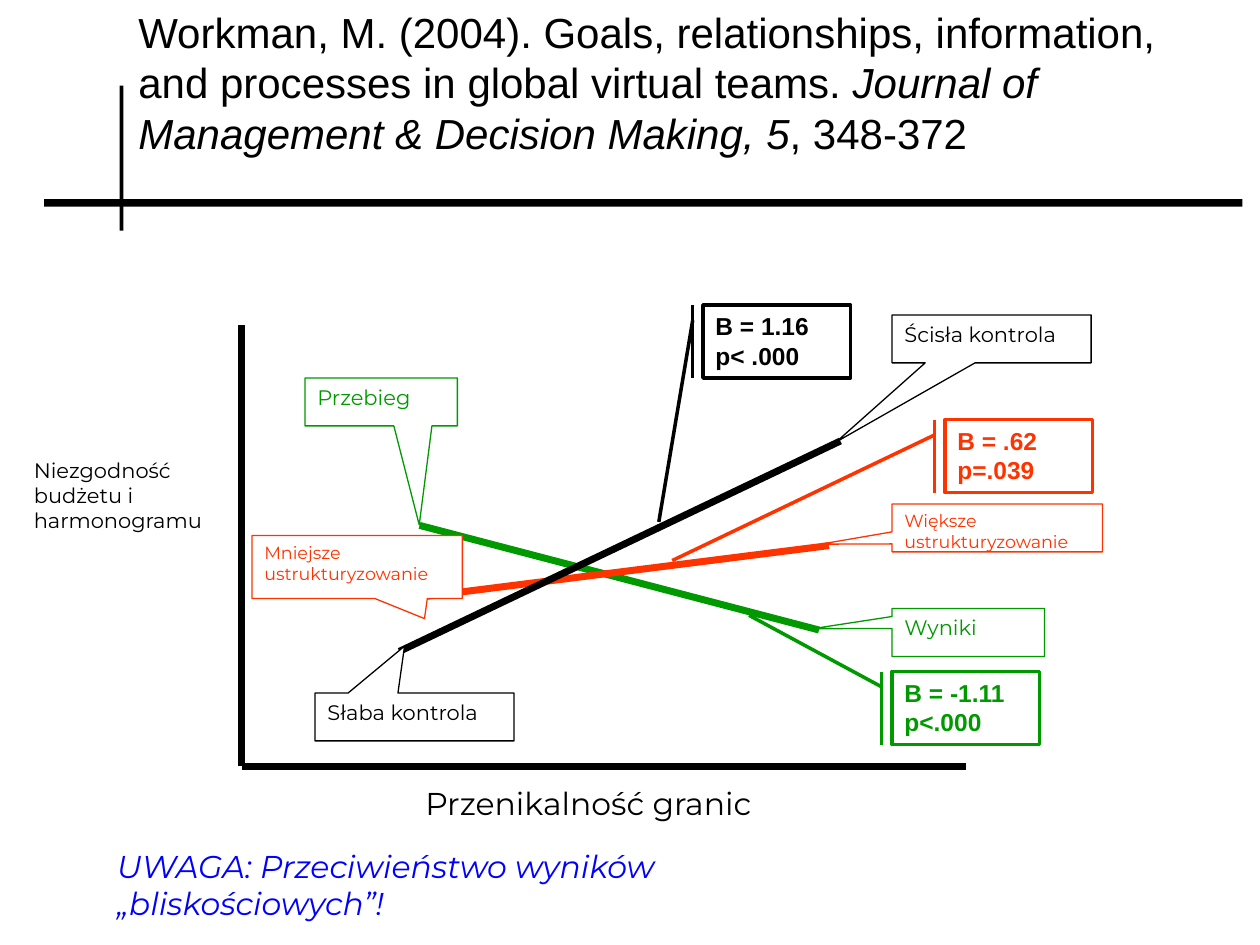
"""Build a slide on how boundary permeability relates to budget and schedule gaps."""
from dataclasses import dataclass
from typing import NamedTuple, Optional

from lxml.etree import SubElement
from pptx import Presentation
from pptx.dml.color import RGBColor as Rgb
from pptx.enum.shapes import MSO_CONNECTOR as Link, MSO_SHAPE as Kind
from pptx.enum.text import MSO_ANCHOR as Anchor, PP_ALIGN as Align
from pptx.oxml.ns import qn
from pptx.util import Inches, Pt


@dataclass(frozen=True)
class Theme:
    black: str = "000000"
    white: str = "FFFFFF"
    green: str = "009900"
    red: str = "FF3300"
    blue: str = "0000FF"
    sans: str = "Arial"
    round: str = "Montserrat"
    title: int = 24
    large: int = 18
    stat: int = 14
    body: int = 12
    small: int = 10
    thick: float = 4
    mid: float = 2
    thin: float = 0.75


class Run(NamedTuple):
    text: str
    slant: bool = False


class Style(NamedTuple):
    font: str
    size: int
    ink: str
    bold: bool = False
    align: Align = Align.LEFT


class Stroke(NamedTuple):
    start: tuple[float, float]
    end: tuple[float, float]
    ink: str


class Box(NamedTuple):
    at: tuple[float, float, float, float]
    style: Style
    rows: tuple[tuple[Run, ...], ...]
    kind: Kind = Kind.RECTANGLE
    edge: Optional[float] = None
    bends: tuple[float, ...] = ()


T = Theme()
WEDGE = Kind.RECTANGULAR_CALLOUT
ACCENT = Kind.LINE_CALLOUT_1_BORDER_AND_ACCENT_BAR


def label(at: tuple, text: str, size: int, ink: str = T.black,
          align: Align = Align.LEFT, slant: bool = False) -> Box:
    """Describe a plain white label."""
    return Box(at, Style(T.round, size, ink, align=align), ((Run(text, slant),),))


def wedge(at: tuple, text: str, ink: str, tip: tuple, size: int = T.body) -> Box:
    """Describe a speech callout that names one end of a trend."""
    return Box(at, Style(T.round, size, ink), ((Run(text),),), WEDGE, T.thin, tip)


def stat(left: float, top: float, beta: str, prob: str, ink: str, tip: tuple) -> Box:
    """Describe a line callout that holds the slope of one trend."""
    return Box((left, top, 1.17, 0.58), Style(T.sans, T.stat, ink, True),
               ((Run(beta),), (Run(prob),)), ACCENT, T.mid, (0.21, -0.07, *tip))


BARS = ((0.35, 1.58, 9.51, 0.06), (0.95, 0.68, 0.03, 1.15))
PARTS = (
    Stroke((1.92, 2.58), (1.92, 6.08), T.black),
    Stroke((1.92, 6.08), (7.67, 6.08), T.black),
    label((2.92, 6.17, 3.5, 0.38), "Przenikalność granic", T.large, align=Align.CENTER),
    label((0.17, 3.58, 1.67, 0.83), "Niezgodność budżetu i harmonogramu", T.body),
    Stroke((3.33, 4.17), (6.5, 5), T.green),
    wedge((2.42, 3, 1.21, 0.38), "Przebieg", T.green, (0.25, 2.57)),
    wedge((7.08, 4.83, 1.21, 0.38), "Wyniki", T.green, (-1.02, -0.08)),
    stat(7.08, 5.33, "Β = -1.11", "p<.000", T.green, (-0.77, -0.97)),
    Stroke((3.25, 4.75), (6.58, 4.33), T.red),
    wedge((7.08, 4, 1.67, 0.38), "Większe ustrukturyzowanie", T.red, (-0.84, 0.34), T.small),
    wedge((2, 4.25, 1.67, 0.5), "Mniejsze ustrukturyzowanie", T.red, (0.32, 0.82), T.small),
    stat(7.5, 3.33, "Β = .62", "p=.039", T.red, (1.93, -1.85)),
    Stroke((3.17, 5.17), (6.67, 3.5), T.black),
    wedge((7.08, 2.5, 1.58, 0.38), "Ścisła kontrola", T.black, (-0.78, 2.15)),
    wedge((2.5, 5.5, 1.58, 0.38), "Słaba kontrola", T.black, (-0.05, -1.48)),
    stat(5.58, 2.42, "Β = 1.16", "p< .000", T.black, (2.97, -0.3)),
    label((0.83, 6.67, 6.25, 0.38), "UWAGA: Przeciwieństwo wyników „bliskościowych”!",
          T.large, T.blue, slant=True),
)
TITLE = (
    Run("Workman, M. (2004). Goals, relationships, information, "
        "and processes in global virtual teams. "),
    Run("Journal of Management & Decision Making, 5", True),
    Run(", 348-372"),
)


def write(frame, rows: tuple, style: Style) -> None:
    """Fill a text frame run by run."""
    frame.word_wrap = True
    frame.vertical_anchor = Anchor.TOP
    for i, row in enumerate(rows):
        para = frame.add_paragraph() if i else frame.paragraphs[0]
        para.alignment = style.align
        for part in row:
            run = para.add_run()
            run.text = part.text
            font = run.font
            font.name, font.size = style.font, Pt(style.size)
            font.bold, font.italic = style.bold, part.slant
            font.color.rgb = Rgb.from_string(style.ink)


def block(slide, at: tuple, fill: str, kind: Kind = Kind.RECTANGLE):
    """Add a filled shape with no outline and no shadow."""
    shape = slide.shapes.add_shape(kind, *map(Inches, at))
    shape.shadow.inherit = False
    shape.fill.solid()
    shape.fill.fore_color.rgb = Rgb.from_string(fill)
    shape.line.fill.background()
    return shape


def draw_box(slide, box: Box) -> None:
    """Draw a label or a callout."""
    shape = block(slide, box.at, T.white, box.kind)
    for i, bend in enumerate(box.bends):
        shape.adjustments[i] = bend
    if box.edge:
        shape.line.color.rgb = Rgb.from_string(box.style.ink)
        shape.line.width = Pt(box.edge)
    write(shape.text_frame, box.rows, box.style)


def draw_line(slide, line: Stroke) -> None:
    """Draw an axis or a trend."""
    link = slide.shapes.add_connector(
        Link.STRAIGHT, *map(Inches, (*line.start, *line.end)))
    link.line.color.rgb = Rgb.from_string(line.ink)
    link.line.width = Pt(T.thick)
    SubElement(link._element.spPr, qn("a:effectLst"))


def main() -> None:
    """Build and save the slide."""
    deck = Presentation()
    deck.slide_width, deck.slide_height = Inches(10), Inches(7.5)
    slide = deck.slides.add_slide(deck.slide_layouts[6])
    for bar in BARS:
        block(slide, bar, T.black)
    for part in PARTS:
        if isinstance(part, Stroke):
            draw_line(slide, part)
        else:
            draw_box(slide, part)
    head = slide.shapes.add_textbox(*map(Inches, (1, 0, 8.83, 1.31)))
    write(head.text_frame, (TITLE,), Style(T.sans, T.title, T.black))
    deck.save("out.pptx")


if __name__ == "__main__":
    main()
